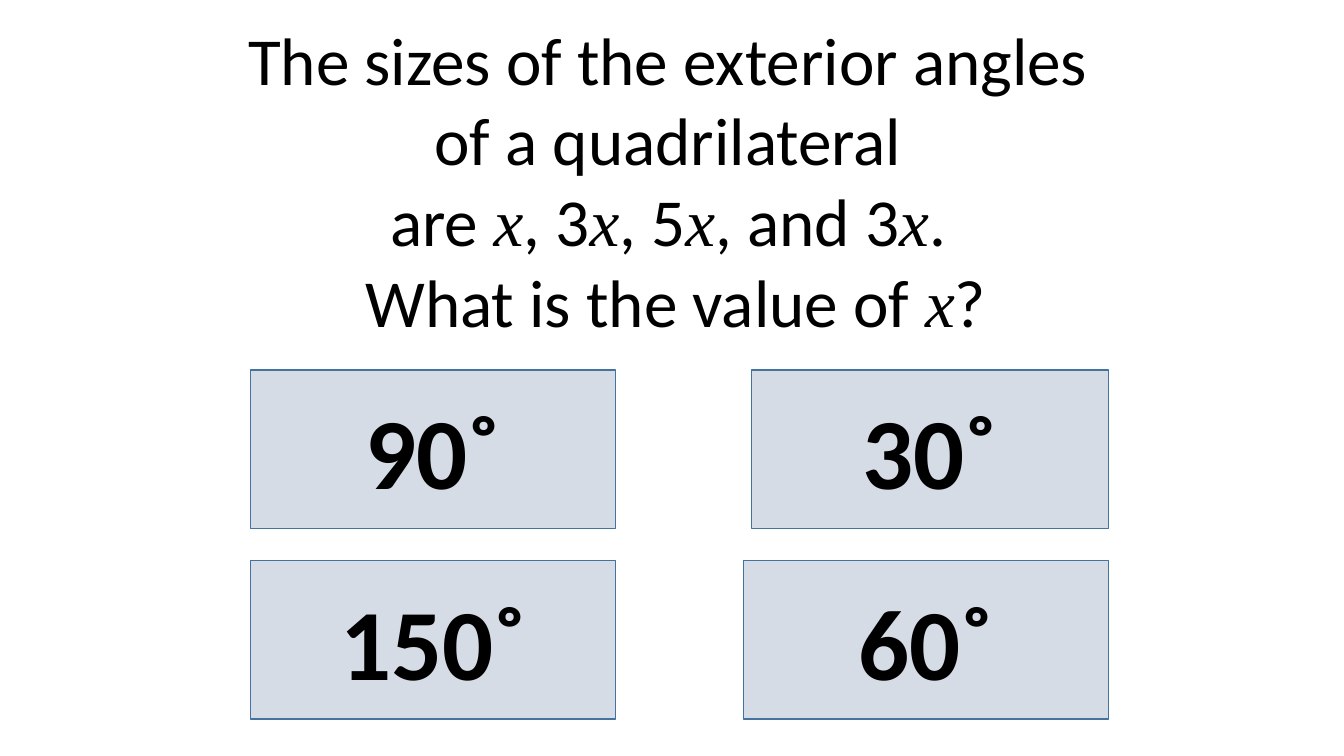
from dataclasses import dataclass

from pptx import Presentation
from pptx.dml.color import RGBColor
from pptx.enum.shapes import MSO_SHAPE
from pptx.enum.text import MSO_ANCHOR, MSO_AUTO_SIZE, PP_ALIGN
from pptx.util import Cm, Pt


@dataclass(frozen=True)
class Theme:
    text: RGBColor = RGBColor(0x00, 0x00, 0x00)
    answer_fill: RGBColor = RGBColor(0xD6, 0xDC, 0xE5)
    answer_line: RGBColor = RGBColor(0x43, 0x73, 0x9E)
    font: str = "Calibri"
    variable_font: str = "Times New Roman"
    question_size: Pt = Pt(48)
    answer_size: Pt = Pt(72)
    line_width: Pt = Pt(1)


class QuizSlide:
    def __init__(self, presentation, theme):
        self.theme = theme
        self.slide = presentation.slides.add_slide(presentation.slide_layouts[6])

    def style_paragraph(self, paragraph, size, bold=False):
        paragraph.alignment = PP_ALIGN.CENTER
        font = paragraph.font
        font.name, font.size, font.bold = self.theme.font, size, bold
        font.color.rgb = self.theme.text

    def add_answer(self, text, left, top, width, height):
        shape = self.slide.shapes.add_shape(
            MSO_SHAPE.RECTANGLE, Cm(left), Cm(top), Cm(width), Cm(height))
        shape.shadow.inherit = False
        shape.fill.solid()
        shape.fill.fore_color.rgb = self.theme.answer_fill
        shape.line.color.rgb = self.theme.answer_line
        shape.line.width = self.theme.line_width
        shape.text_frame.vertical_anchor = MSO_ANCHOR.MIDDLE
        paragraph = shape.text_frame.paragraphs[0]
        paragraph.text = text
        self.style_paragraph(paragraph, self.theme.answer_size, bold=True)

    def add_question(self, lines, left, top, width, height):
        """Each line is a list of text pieces; a piece "x" is set as a variable."""
        box = self.slide.shapes.add_textbox(Cm(left), Cm(top), Cm(width), Cm(height))
        frame = box.text_frame
        frame.word_wrap = True
        frame.auto_size = MSO_AUTO_SIZE.SHAPE_TO_FIT_TEXT
        for index, pieces in enumerate(lines):
            paragraph = frame.add_paragraph() if index else frame.paragraphs[0]
            self.style_paragraph(paragraph, self.theme.question_size)
            for piece in pieces:
                run = paragraph.add_run()
                run.text = piece
                if piece == "x":
                    run.font.name = self.theme.variable_font
                    run.font.italic = True


QUESTION = [
    ["The sizes of the exterior angles "],
    ["of a quadrilateral "],
    ["are ", "x", ", 3", "x", ", 5", "x", ", and 3", "x", ". "],
    ["What is the value of ", "x", "?"],
]
ANSWERS = [["90˚", "30˚"], ["150˚", "60˚"]]
GRID_LEFT, GRID_RIGHT, GRID_TOP = 6.32, 27.94, 9.32
ROW_PITCH, ANSWER_HEIGHT = 4.8, 4
LEFT_WIDTH = 9.2
RIGHT_WIDTHS = [9, 9.2]


def main():
    presentation = Presentation()
    presentation.slide_width, presentation.slide_height = Cm(33.87), Cm(19.05)
    quiz = QuizSlide(presentation, Theme())
    for row, (left_answer, right_answer) in enumerate(ANSWERS):
        top = GRID_TOP + row * ROW_PITCH
        right_width = RIGHT_WIDTHS[row]
        quiz.add_answer(left_answer, GRID_LEFT, top, LEFT_WIDTH, ANSWER_HEIGHT)
        quiz.add_answer(right_answer, GRID_RIGHT - right_width, top,
                        right_width, ANSWER_HEIGHT)
    quiz.add_question(QUESTION, 5.13, 0.33, 23.8, 8.46)
    presentation.save("out.pptx")


if __name__ == "__main__":
    main()
